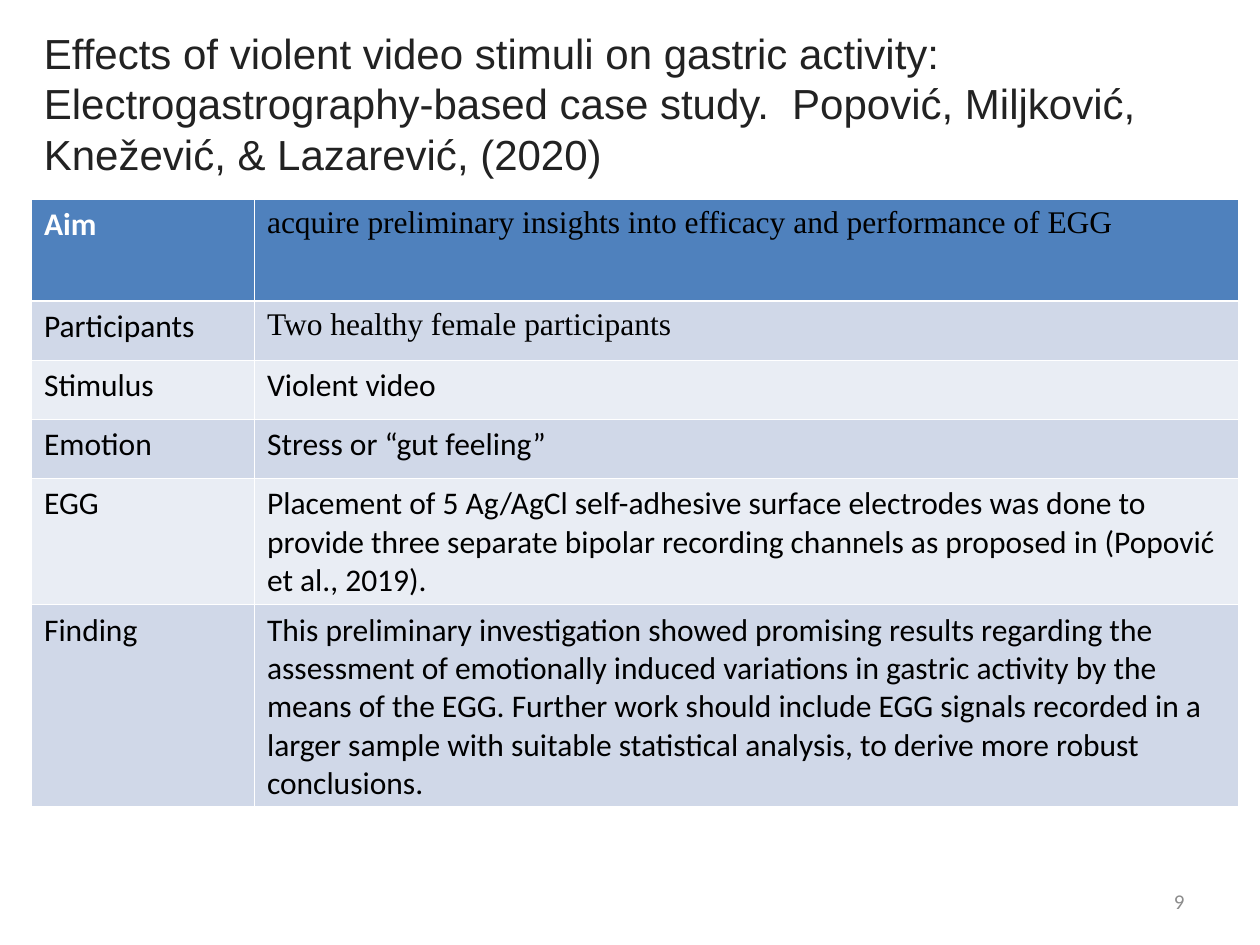
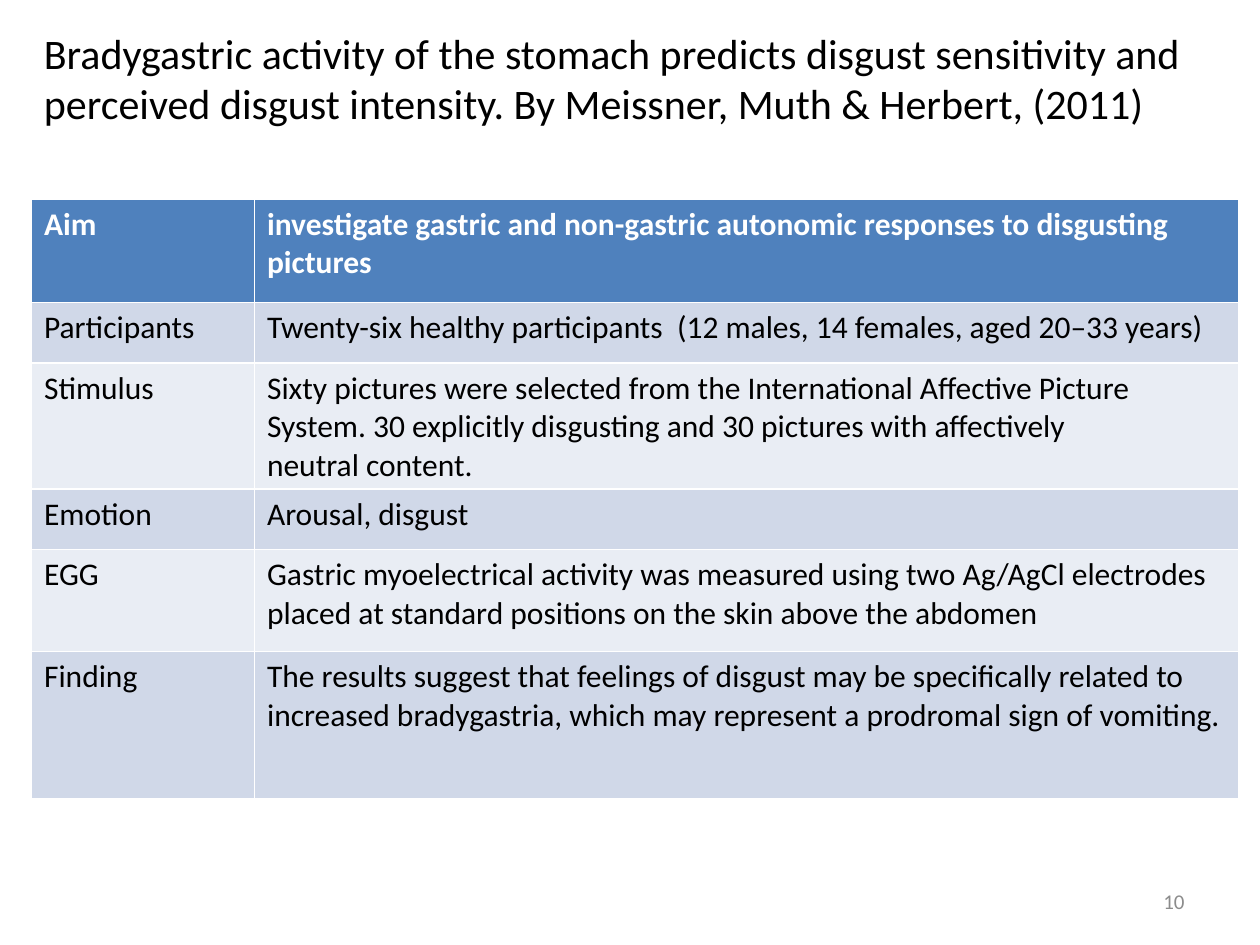
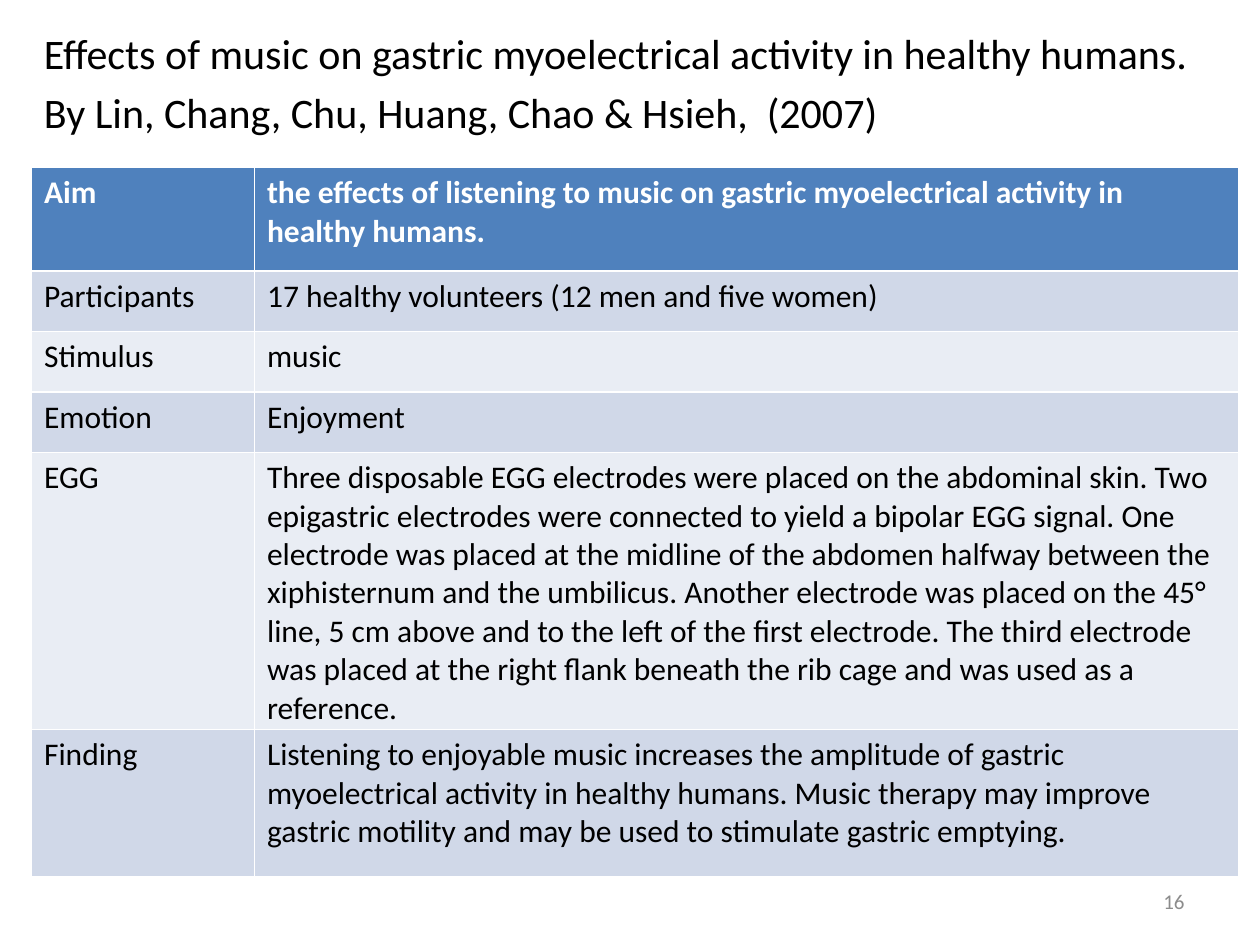
import pptx
import pptx.dml.color
import pptx.enum.text
import pptx.util

Inches = pptx.util.Inches
Pt = pptx.util.Pt
RGB = pptx.dml.color.RGBColor.from_string

# Theme: colours, fonts and type sizes
THEME = {
    "header_fill": "4F81BD",
    "band_fills": ["E9EDF4", "D0D8E8"],
    "title": {"name": "Calibri", "size": Pt(24), "color": "000000"},
    "header": {"name": "Calibri", "size": Pt(18), "color": "FFFFFF", "bold": True},
    "body": {"name": "Calibri", "size": Pt(18), "color": "000000", "bold": False},
    "number": {"name": "Calibri", "size": Pt(12), "color": "8C8C8C"},
}
SERIF = {"name": "Times New Roman", "color": "000000", "bold": False}

LABELS = ["Aim", "Participants", "Stimulus", "Emotion", "EGG", "Finding"]
COLUMN_WIDTHS = [1.77, 7.81]

# One entry per study; "special" restyles findings by their row label
STUDIES = [
    {
        "number": "9",
        "title": ["Effects of violent video stimuli on gastric activity: Electrogastrography-based case study.  Popović, Miljković, Knežević, & Lazarević, (2020)"],
        "title_style": {"name": "Arial", "color": "222222"},
        "special": {"Aim": SERIF, "Participants": SERIF},
        "table_top": 1.58,
        "row_heights": [0.81, 0.47, 0.47, 0.47, 0.8, 1.15],
        "details": [
            ["acquire preliminary insights into efficacy and performance of EGG"],
            ["Two healthy female participants"],
            ["Violent video"],
            ["Stress or “gut feeling”"],
            ["Placement of 5 Ag/AgCl self-adhesive surface electrodes was done to provide three separate bipolar recording channels as proposed in (Popović et al., 2019)."],
            ["This preliminary investigation showed promising results regarding the assessment of emotionally induced variations in gastric activity by the means of the EGG. Further work should include EGG signals recorded in a larger sample with suitable statistical analysis, to derive more robust conclusions."],
        ],
    },
    {
        "number": "10",
        "title": ["Bradygastric activity of the stomach predicts disgust sensitivity and perceived disgust intensity. By Meissner, Muth & Herbert, (2011)"],
        "title_style": {},
        "special": {},
        "table_top": 1.58,
        "row_heights": [0.82, 0.48, 0.48, 0.48, 0.81, 1.17],
        "details": [
            ["investigate gastric and non-gastric autonomic responses to disgusting pictures"],
            ["Twenty-six healthy participants  (12 males, 14 females, aged 20–33 years)"],
            [
                "Sixty pictures were selected from the International Affective Picture System. 30 explicitly disgusting and 30 pictures with affectively",
                "neutral content.",
            ],
            ["Arousal, disgust"],
            [
                "Gastric myoelectrical activity was measured using two Ag/AgCl electrodes",
                "placed at standard positions on the skin above the abdomen",
            ],
            ["The results suggest that feelings of disgust may be specifically related to increased bradygastria, which may represent a prodromal sign of vomiting."],
        ],
    },
    {
        "number": "16",
        "title": [
            "Effects of music on gastric myoelectrical activity in healthy humans.",
            "By Lin, Chang, Chu, Huang, Chao & Hsieh,  (2007)",
        ],
        "title_style": {},
        "special": {},
        "table_top": 1.33,
        "row_heights": [0.82, 0.48, 0.48, 0.48, 2.17, 1.17],
        "details": [
            ["the effects of listening to music on gastric myoelectrical activity in healthy humans."],
            ["17 healthy volunteers (12 men and five women)"],
            ["music"],
            ["Enjoyment"],
            ["Three disposable EGG electrodes were placed on the abdominal skin. Two epigastric electrodes were connected to yield a bipolar EGG signal. One electrode was placed at the midline of the abdomen halfway between the xiphisternum and the umbilicus. Another electrode was placed on the 45° line, 5 cm above and to the left of the first electrode. The third electrode was placed at the right flank beneath the rib cage and was used as a reference."],
            ["Listening to enjoyable music increases the amplitude of gastric myoelectrical activity in healthy humans. Music therapy may improve gastric motility and may be used to stimulate gastric emptying."],
        ],
    },
]


def write(frame, lines, style, **layout):
    """Fill a text frame, one paragraph per line."""
    frame.word_wrap = True
    for index, line in enumerate(lines):
        para = frame.paragraphs[0] if index == 0 else frame.add_paragraph()
        for attribute, value in layout.items():
            setattr(para, attribute, value)
        span = para.add_run()
        span.text = line
        for attribute, value in style.items():
            if attribute == "color":
                span.font.color.rgb = RGB(value)
            else:
                setattr(span.font, attribute, value)


deck = pptx.Presentation()
deck.slide_width = Inches(10)
deck.slide_height = Inches(7.5)

for study in STUDIES:
    page = deck.slides.add_slide(deck.slide_layouts[6])

    # Study title
    title_box = page.shapes.add_textbox(Inches(0.25), Inches(0.17), Inches(9.58), Inches(7.17))
    write(title_box.text_frame, study["title"], THEME["title"] | study["title_style"], space_before=Pt(4.8))

    # Summary table
    heights = study["row_heights"]
    table = page.shapes.add_table(
        len(LABELS), len(COLUMN_WIDTHS), Inches(0.25), Inches(study["table_top"]),
        Inches(sum(COLUMN_WIDTHS)), Inches(sum(heights))).table
    for column, width in zip(table.columns, COLUMN_WIDTHS):
        column.width = Inches(width)
    for index, (label, detail) in enumerate(zip(LABELS, study["details"])):
        table.rows[index].height = Inches(heights[index])
        fill = THEME["band_fills"][index % 2] if index else THEME["header_fill"]
        style = THEME["body" if index else "header"]
        detail_style = style | study["special"].get(label, {})
        for cell, lines, cell_style in zip(table.rows[index].cells, [[label], detail], [style, detail_style]):
            cell.fill.solid()
            cell.fill.fore_color.rgb = RGB(fill)
            write(cell.text_frame, lines, cell_style)

    # Slide number
    number_box = page.shapes.add_textbox(Inches(7.17), Inches(6.95), Inches(2.33), Inches(0.4))
    number_box.text_frame.vertical_anchor = pptx.enum.text.MSO_ANCHOR.MIDDLE
    write(number_box.text_frame, [study["number"]], THEME["number"], alignment=pptx.enum.text.PP_ALIGN.RIGHT)

deck.save("out.pptx")
